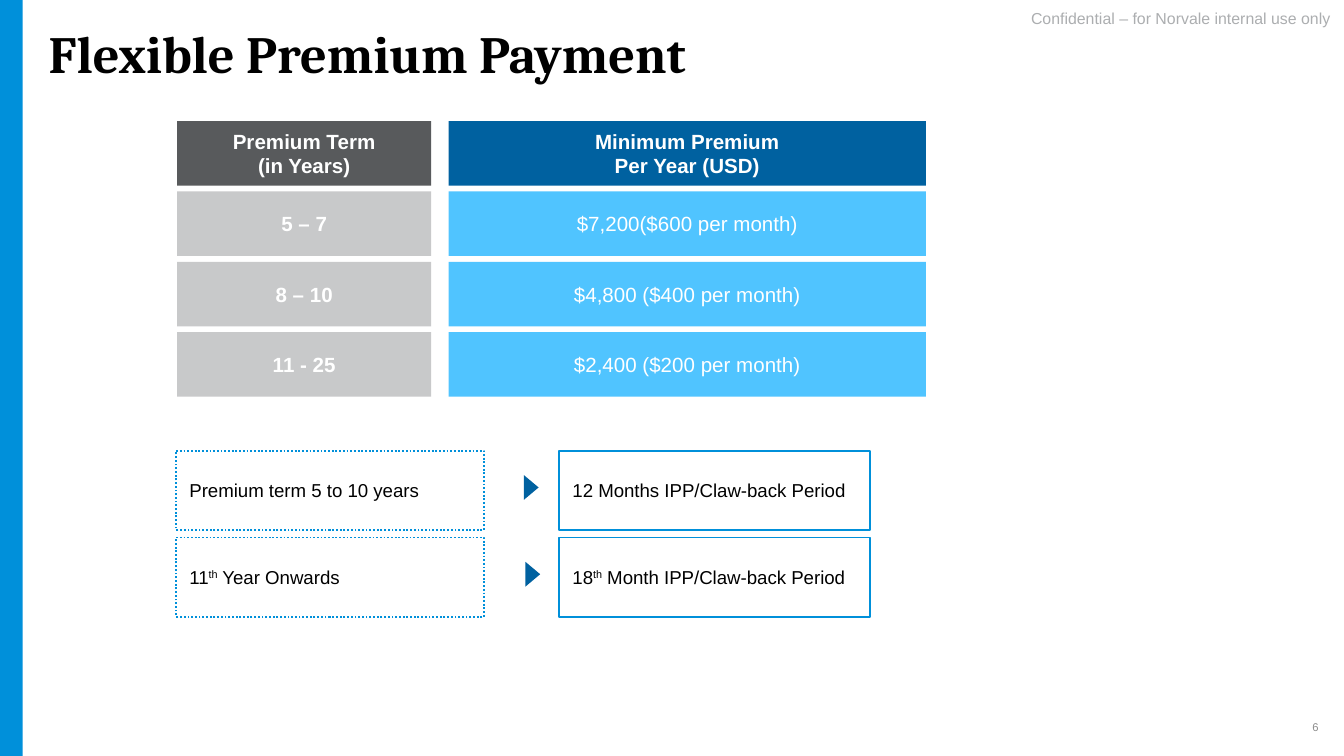
"""Build the flexible premium payment slide."""
from pptx import Presentation
from pptx.dml.color import RGBColor
from pptx.enum.dml import MSO_LINE_DASH_STYLE as Dash
from pptx.enum.shapes import MSO_SHAPE as Shape
from pptx.enum.text import MSO_ANCHOR as Anchor, MSO_AUTO_SIZE as AutoSize, PP_ALIGN as Align
from pptx.util import Cm, Pt

COLORS = {
    "bar": "0090DA", "navy": "0061A0", "sky": "50C4FF", "dark": "585A5C",
    "silver": "C8C9CA", "note": "ACAEB0", "number": "8C8C8C",
    "white": "FFFFFF", "black": "000000",
}
TABLE_TOP, ROW_PITCH, ROW_H = 2.29, 1.33, 1.22
COLUMNS = [
    (3.35, 4.8, "dark", "silver", True,
     ["Premium Term\n(in Years)", "5 – 7", "8 – 10", "11 - 25"]),
    (8.48, 9.02, "navy", "sky", False,
     ["Minimum Premium\nPer Year (USD)", "$7,200($600 per month)",
      "$4,800 ($400 per month)", "$2,400 ($200 per month)"]),
]
RULES_TOP, RULE_PITCH, RULE_H = 8.52, 1.64, 1.5
RULES = [
    (["Premium term 5 to 10 years"], ["12 Months IPP/Claw-back Period"], 9.9),
    (["11", "th", " Year Onwards"], ["18", "th", " Month IPP/Claw-back Period"], 9.93),
]


def rgb(name):
    return RGBColor.from_string(COLORS[name])


def style(p, size, color, bold=False, align=Align.LEFT, font="Arial"):
    p.alignment = align
    f = p.font
    f.name, f.size, f.bold = font, Pt(size), bold
    f.color.rgb = rgb(color)


def set_frame(tf, anchor, side, edge):
    tf.word_wrap = True
    tf.auto_size = AutoSize.NONE
    tf.vertical_anchor = anchor
    tf.margin_left = tf.margin_right = Cm(side)
    tf.margin_top = tf.margin_bottom = Cm(edge)


def add_rect(s, x, y, w, h, fill=None, line=None, dash=None):
    sp = s.shapes.add_shape(Shape.RECTANGLE, Cm(x), Cm(y), Cm(w), Cm(h))
    sp.shadow.inherit = False
    if fill:
        sp.fill.solid()
        sp.fill.fore_color.rgb = rgb(fill)
    else:
        sp.fill.background()
    if line:
        sp.line.color.rgb = rgb(line)
        sp.line.width = Pt(1)
        if dash:
            sp.line.dash_style = dash
    else:
        sp.line.fill.background()
    set_frame(sp.text_frame, Anchor.MIDDLE, 0.25, 0.13)
    return sp


def add_cell(s, x, y, w, text, fill, bold):
    tf = add_rect(s, x, y, w, ROW_H, fill).text_frame
    tf.text = text
    for p in tf.paragraphs:
        style(p, 11, "white", bold, Align.CENTER)


def add_rule_box(s, x, y, w, parts, dash=None):
    p = add_rect(s, x, y, w, RULE_H, line="bar", dash=dash).text_frame.paragraphs[0]
    style(p, 10, "black")
    for part in parts:
        r = p.add_run()
        r.text = part
        if part == "th":
            r.font._element.set("baseline", "30000")


def add_arrow(s, x, y, w=0.28, h=0.47):
    fb = s.shapes.build_freeform(Cm(x), Cm(y))
    fb.add_line_segments([(Cm(x + w), Cm(y + h / 2)), (Cm(x), Cm(y + h))])
    sp = fb.convert_to_shape()
    sp.shadow.inherit = False
    sp.fill.solid()
    sp.fill.fore_color.rgb = rgb("navy")
    sp.line.fill.background()


def add_label(s, x, y, w, h, text, size, color, anchor, side, edge):
    tf = s.shapes.add_textbox(Cm(x), Cm(y), Cm(w), Cm(h)).text_frame
    set_frame(tf, anchor, side, edge)
    tf.text = text
    p = tf.paragraphs[0]
    style(p, size, color, align=Align.RIGHT)
    return p


def set_title(s, text):
    sp = s.shapes.title
    sp.left, sp.top, sp.width, sp.height = Cm(0.74), Cm(0.43), Cm(19.28), Cm(1.37)
    tf = sp.text_frame
    set_frame(tf, Anchor.TOP, 0.18, 0.1)
    tf.text = text
    p = tf.paragraphs[0]
    p.line_spacing = 0.9
    style(p, 28, "black", True, font="Cambria")


def main():
    prs = Presentation()
    prs.slide_width, prs.slide_height = Cm(25.4), Cm(14.29)
    s = prs.slides.add_slide(prs.slide_layouts[5])
    add_rect(s, 0, 0, 0.43, 14.29, "bar")
    note = add_label(s, 17.63, 0.2, 7.77, 0.43,
                     "Confidential – for Norvale internal use only",
                     8.5, "note", Anchor.TOP, 0.25, 0)
    note.line_spacing = 0.9
    set_title(s, "Flexible Premium Payment")
    add_label(s, 23.22, 13.36, 1.88, 0.76, "6", 6, "number", Anchor.MIDDLE, 0.18, 0.1)

    for x, w, head, body, bold, texts in COLUMNS:
        for i, text in enumerate(texts):
            add_cell(s, x, TABLE_TOP + i * ROW_PITCH, w, text,
                     body if i else head, bold or i == 0)

    for i, (term, period, arrow_x) in enumerate(RULES):
        y = RULES_TOP + i * RULE_PITCH
        add_rule_box(s, 3.33, y, 5.82, term, Dash.ROUND_DOT)
        add_rule_box(s, 10.57, y, 5.87, period)
        add_arrow(s, arrow_x, y + 0.46)

    prs.save("out.pptx")


if __name__ == "__main__":
    main()
